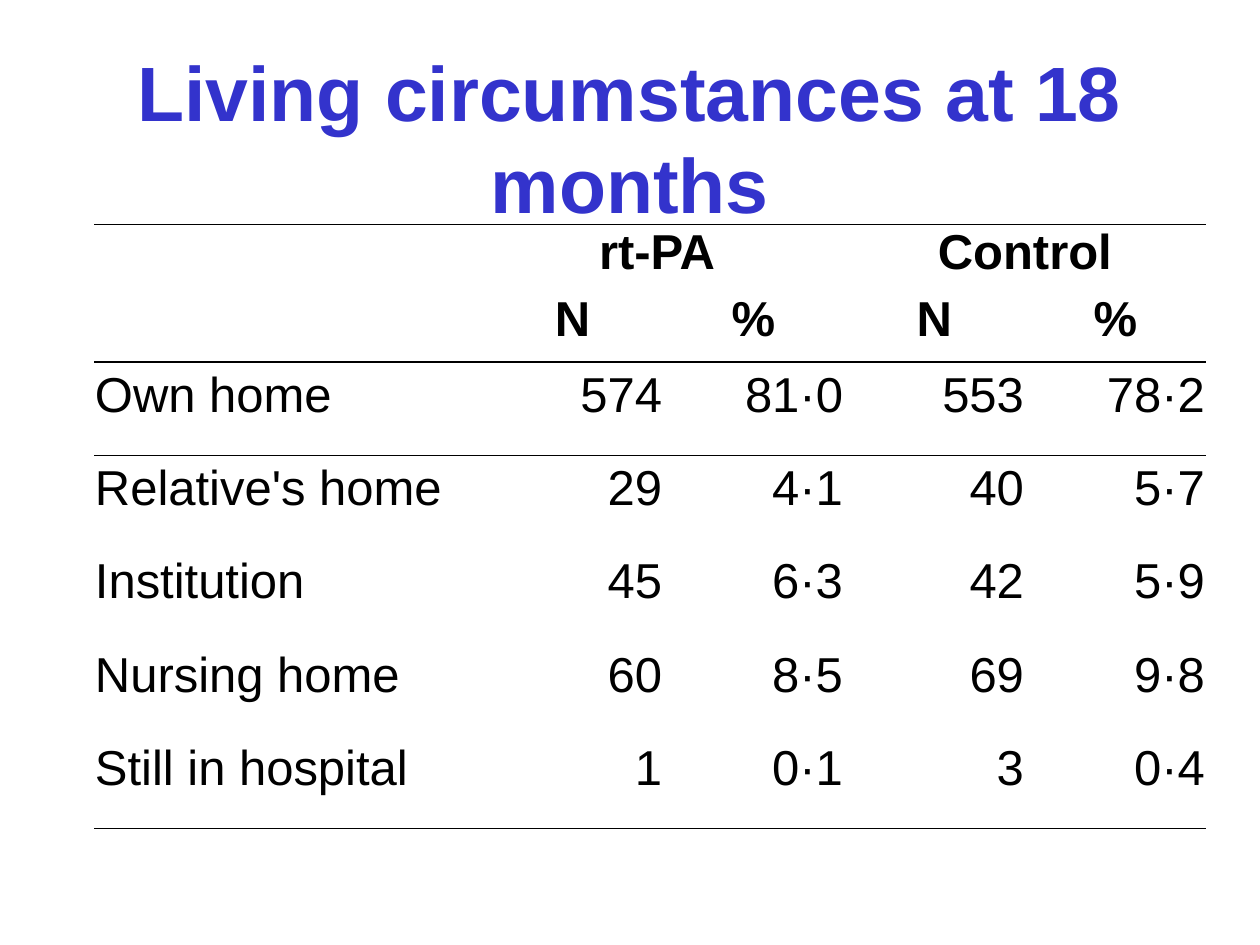
from lxml import etree
from pptx import Presentation
from pptx.dml.color import RGBColor
from pptx.enum import text
from pptx.oxml.ns import qn
from pptx.util import Emu, Pt

TITLE = "Living circumstances at 18 months"
GROUPS = ["rt-PA ", "Control"]
MEASURES = ["N", "%"]
OUTCOMES = [
    ("Own home", "574", "81·0", "553", "78·2"),
    ("Relative's home", "29", "4·1", "40", "5·7"),
    ("Institution", "45", "6·3", "42", "5·9"),
    ("Nursing home", "60", "8·5", "69", "9·8"),
    ("Still in hospital", "1", "0·1", "3", "0·4"),
]

BLUE = RGBColor(0x33, 0x33, 0xCC)
BLACK = RGBColor(0, 0, 0)
NO_STYLE = "{2D5ABB26-0587-4C30-8999-92F81FD0307C}"
LEFT, CENTER, RIGHT = (text.PP_ALIGN.LEFT, text.PP_ALIGN.CENTER,
                       text.PP_ALIGN.RIGHT)

SCALE = 914400 / 126
TITLE_BOX = (42, 32, 1176, 210)
TABLE_LEFT, TABLE_TOP = 94, 224
COLUMNS = [388] + [181] * 4
HEADER_ROWS = [67, 71]
BODY_HEIGHT = 467
ROWS = HEADER_ROWS + [BODY_HEIGHT / len(OUTCOMES)] * len(OUTCOMES)
LAST = len(ROWS) - 1
# Rules by row and side, in points; the middle one is shared by two rows.
RULES = {0: {"T": 0.5}, 1: {"B": 1}, 2: {"T": 1}, LAST: {"B": 0.5}}


def px(length):
    return Emu(round(length * SCALE))


def set_attributes(target, values):
    for name, value in values.items():
        setattr(target, name, value)


def write(frame, words, align, size, color, bold):
    frame.text = words
    paragraph = frame.paragraphs[0]
    paragraph.alignment = align
    set_attributes(paragraph.font, {"name": "Arial", "size": Pt(size), "bold": bold})
    paragraph.font.color.rgb = color


def add_rule(cell, side, width):
    props = cell._tc.get_or_add_tcPr()
    line = etree.SubElement(props, qn(f"a:ln{side}"), w=str(Pt(width)))
    fill = etree.SubElement(line, qn("a:solidFill"))
    etree.SubElement(fill, qn("a:srgbClr"), val=str(BLACK))


def fill_cell(cell, words, align, header):
    write(cell.text_frame, words, align, 28, BLACK, header)
    set_attributes(cell, {
        "margin_left": px(1), "margin_right": px(1),
        "margin_top": px(1 if header else 6),
        "margin_bottom": px(0 if header else 6),
    })


def add_outcome_table(slide):
    frame = slide.shapes.add_table(
        len(ROWS), len(COLUMNS), px(TABLE_LEFT), px(TABLE_TOP),
        px(sum(COLUMNS)), px(sum(ROWS)))
    table = frame.table
    set_attributes(table, {"first_row": False, "horz_banding": False})
    table._tbl.tblPr.find(qn("a:tableStyleId")).text = NO_STYLE
    for column, width in zip(table.columns, COLUMNS):
        column.width = px(width)
    for row, height in zip(table.rows, ROWS):
        row.height = px(height)

    for r in range(len(ROWS)):
        for c in range(len(COLUMNS)):
            cell = table.cell(r, c)
            for side, width in RULES.get(r, {}).items():
                add_rule(cell, side, width)
            cell.fill.background()
    # The stub cell spans both header rows, so it carries their lower rule.
    add_rule_before_fill = table.cell(0, 0)._tc.tcPr
    add_rule(table.cell(0, 0), "B", 1)
    add_rule_before_fill.append(add_rule_before_fill.find(qn("a:noFill")))

    table.cell(0, 0).merge(table.cell(1, 0))
    for g, group in enumerate(GROUPS):
        first = 1 + g * len(MEASURES)
        table.cell(0, first).merge(table.cell(0, first + len(MEASURES) - 1))
        fill_cell(table.cell(0, first), group, CENTER, True)
        for m, measure in enumerate(MEASURES):
            fill_cell(table.cell(1, first + m), measure, CENTER, True)
    for r, outcome in enumerate(OUTCOMES, len(HEADER_ROWS)):
        for c, value in enumerate(outcome):
            fill_cell(table.cell(r, c), value, RIGHT if c else LEFT, False)


def main():
    deck = Presentation()
    set_attributes(deck, {"slide_width": px(1260), "slide_height": px(945)})
    slide = deck.slides.add_slide(deck.slide_layouts[5])
    title = slide.shapes.title
    set_attributes(title, dict(zip(("left", "top", "width", "height"),
                                   map(px, TITLE_BOX))))
    write(title.text_frame, TITLE, CENTER, 44, BLUE, True)
    set_attributes(title.text_frame, {
        "word_wrap": True, "auto_size": text.MSO_AUTO_SIZE.NONE,
        "vertical_anchor": text.MSO_ANCHOR.MIDDLE})
    add_outcome_table(slide)
    deck.save("out.pptx")


if __name__ == "__main__":
    main()
